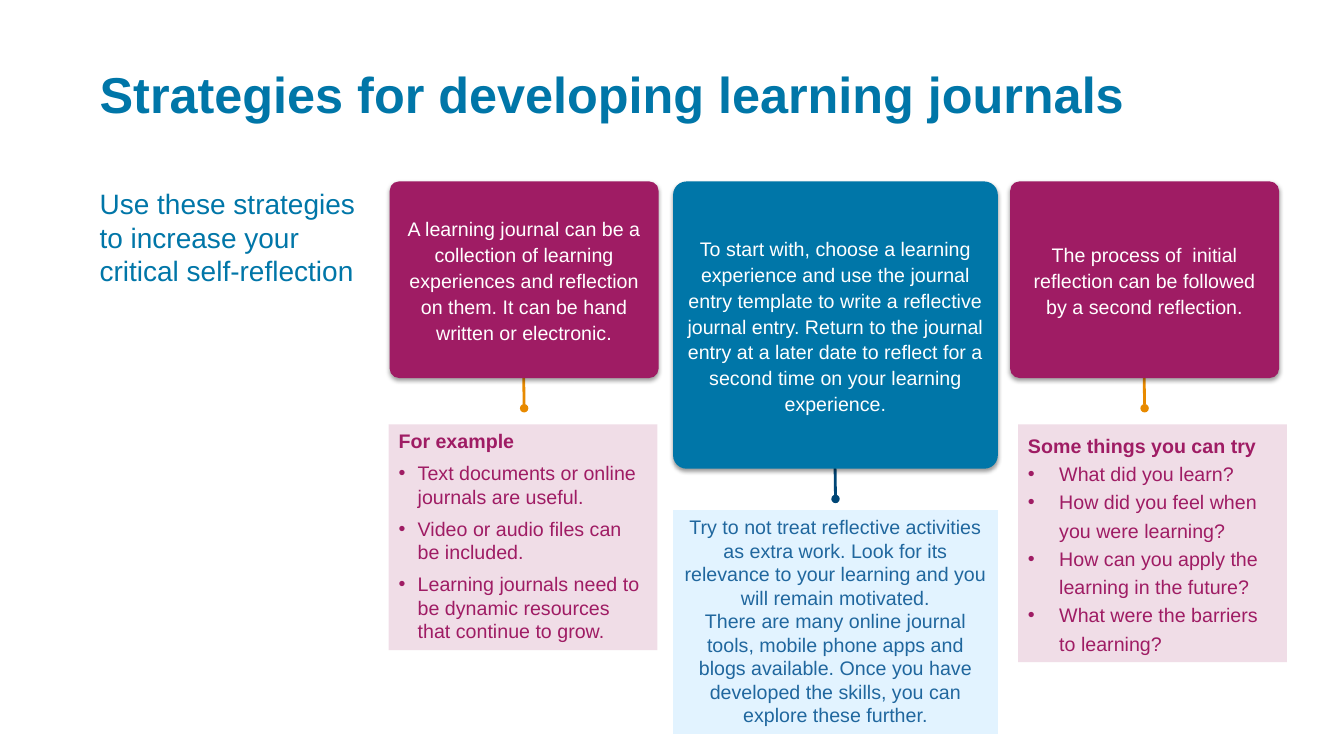
from dataclasses import dataclass

from lxml.etree import SubElement
from pptx import Presentation
from pptx.dml.color import RGBColor
from pptx.enum.shapes import MSO_CONNECTOR, MSO_SHAPE
from pptx.enum.text import MSO_ANCHOR as Anchor, MSO_AUTO_SIZE as AutoSize, PP_ALIGN as Align
from pptx.oxml.ns import qn
from pptx.util import Inches, Pt


@dataclass(frozen=True)
class Theme:
    """Colours, type sizes and font of the slide."""
    font: str = "Arial"
    blue: str = "0076A8"
    navy: str = "004676"
    steel: str = "20679E"
    sky: str = "B1DFFF"
    plum: str = "9F1C64"
    orange: str = "E88A00"
    white: str = "FFFFFF"
    black: str = "000000"
    title: int = 36
    lead: int = 20
    body: int = 14


THEME = Theme()
COLUMNS, ROWS = 120, 75
CARD_TOP = 18


def rgb(colour):
    """Turn a hex string into a colour."""
    return RGBColor.from_string(colour)


def add_alpha(colour_element, percent):
    """Set the opacity of a colour."""
    SubElement(colour_element, qn("a:alpha")).set("val", str(percent * 1000))


def write(paragraph, text, *, size=THEME.body, colour=THEME.white, bold=False,
          align=Align.LEFT, spacing=None, after=0, hang=0):
    """Write one formatted paragraph, with a bullet when it hangs."""
    paragraph.alignment = align
    paragraph.space_before = Pt(0)
    paragraph.space_after = Pt(after)
    if spacing:
        paragraph.line_spacing = spacing
    run = paragraph.add_run()
    run.text = text
    run.font.name, run.font.size, run.font.bold = THEME.font, Pt(size), bold
    run.font.color.rgb = rgb(colour)
    if hang:
        properties = paragraph._p.get_or_add_pPr()
        properties.set("marL", str(Inches(hang)))
        properties.set("indent", str(-Inches(hang)))
        SubElement(properties, qn("a:buFont")).set("typeface", THEME.font)
        SubElement(properties, qn("a:buChar")).set("char", "•")


class Board:
    """Draw elements on a slide divided into columns and rows."""

    def __init__(self, presentation):
        """Add a title-only slide and measure its grid."""
        self.slide = presentation.slides.add_slide(presentation.slide_layouts[5])
        self.shapes = self.slide.shapes
        self.column = presentation.slide_width / COLUMNS
        self.row = presentation.slide_height / ROWS

    def place(self, left, top, width, height):
        """Convert a grid area to slide lengths."""
        return (round(left * self.column), round(top * self.row),
                round(width * self.column), round(height * self.row))

    def title(self, text, *area):
        """Move and fill the title placeholder."""
        shape = self.shapes.title
        shape.left, shape.top, shape.width, shape.height = self.place(*area)
        frame = shape.text_frame
        frame.auto_size, frame.vertical_anchor = AutoSize.NONE, Anchor.TOP
        write(frame.paragraphs[0], text, size=THEME.title, colour=THEME.blue, bold=True)

    def lead(self, text, *area):
        """Add the introductory text."""
        frame = self.shapes.add_textbox(*self.place(*area)).text_frame
        frame.word_wrap = True
        write(frame.paragraphs[0], text, size=THEME.lead, colour=THEME.blue)

    def block(self, preset, colour, *area):
        """Add a plain filled shape with wrapping text."""
        shape = self.shapes.add_shape(preset, *self.place(*area))
        shape.shadow.inherit = False
        shape.fill.solid()
        shape.fill.fore_color.rgb = rgb(colour)
        shape.line.fill.background()
        shape.text_frame.word_wrap = True
        return shape

    def stem(self, x, card_bottom, colour):
        """Add a line from behind a card to a dot below it."""
        ends = self.place(x - 0.1, card_bottom - 4.7, x, card_bottom + 3)
        line = self.shapes.add_connector(MSO_CONNECTOR.STRAIGHT, *ends)
        line.line.color.rgb = rgb(colour)
        line.line.width = Pt(2)
        SubElement(line.line._get_or_add_ln(), qn("a:tailEnd")).set("type", "oval")
        SubElement(line._element.spPr, qn("a:effectLst"))

    def card(self, text, left, width, height, colour, stem_colour):
        """Add a rounded card with its shadow and stem."""
        self.stem(left + width / 2, CARD_TOP + height, stem_colour)
        shape = self.block(MSO_SHAPE.ROUNDED_RECTANGLE, colour, left, CARD_TOP, width, height)
        shape.adjustments[0] = 0.047
        effects = shape._element.spPr.find(qn("a:effectLst"))
        shadow = SubElement(effects, qn("a:outerShdw"), blurRad=str(Pt(3.1)),
                            dist=str(Pt(1.6)), dir="5400000", rotWithShape="0")
        add_alpha(SubElement(shadow, qn("a:srgbClr"), val=THEME.black), 38)
        shape.text_frame.vertical_anchor = Anchor.MIDDLE
        write(shape.text_frame.paragraphs[0], text, align=Align.CENTER, spacing=1.1)

    def note(self, area, fill, opacity, colour, lines, heading=None, **style):
        """Add a tinted note with an optional heading above its lines."""
        shape = self.block(MSO_SHAPE.RECTANGLE, fill, *area)
        add_alpha(shape._element.spPr.find(qn("a:solidFill"))[0], opacity)
        frame = shape.text_frame
        frame.vertical_anchor, frame.auto_size = Anchor.TOP, AutoSize.SHAPE_TO_FIT_TEXT
        texts = ([heading] if heading else []) + lines
        for index, text in enumerate(texts):
            paragraph = frame.add_paragraph() if index else frame.paragraphs[0]
            is_heading = bool(heading) and index == 0
            line_style = {**style, "hang": 0} if is_heading else style
            write(paragraph, text, colour=colour, bold=is_heading, **line_style)


def main():
    """Build and save the slide."""
    presentation = Presentation()
    presentation.slide_width, presentation.slide_height = Inches(13.33), Inches(7.5)
    board = Board(presentation)
    board.title("Strategies for developing learning journals", 8, 5.8, 99.7, 8.4)
    board.lead("Use these strategies to increase your critical self-reflection",
               8, CARD_TOP, 25.75, 11.1)

    cards = [
        ("A learning journal can be a collection of learning experiences and reflection "
         "on them. It can be hand written or electronic.",
         34.8, 24, 19.5, THEME.plum, THEME.orange),
        ("To start with, choose a learning experience and use the journal entry template "
         "to write a reflective journal entry. Return to the journal entry at a later date "
         "to reflect for a second time on your learning experience.",
         60.1, 29, 28.5, THEME.blue, THEME.navy),
        ("The process of  initial reflection can be followed by a second reflection.",
         90.2, 24, 19.5, THEME.plum, THEME.orange),
    ]
    for card in cards:
        board.card(*card)

    board.note((34.7, 42.1, 24, 22.4), THEME.plum, 15, THEME.plum, [
        "Text documents or online journals are useful.",
        "Video or audio files can be included.",
        "Learning journals need to be dynamic resources that continue to grow.",
    ], heading="For example", after=6, hang=0.19)
    board.note((60.1, 50.6, 29, 22.2), THEME.sky, 37, THEME.steel, [
        "Try to not treat reflective activities as extra work. Look for its relevance "
        "to your learning and you will remain motivated.",
        "There are many online journal tools, mobile phone apps and blogs available. "
        "Once you have developed the skills, you can explore these further.",
    ], align=Align.CENTER)
    board.note((90.9, 42.1, 24, 23.6), THEME.plum, 15, THEME.plum, [
        "What did you learn?",
        "How did you feel when you were learning?",
        "How can you apply the learning in the future?",
        "What were the barriers to learning?",
    ], heading="Some things you can try", spacing=1.2, hang=0.31)
    presentation.save("out.pptx")


if __name__ == "__main__":
    main()
